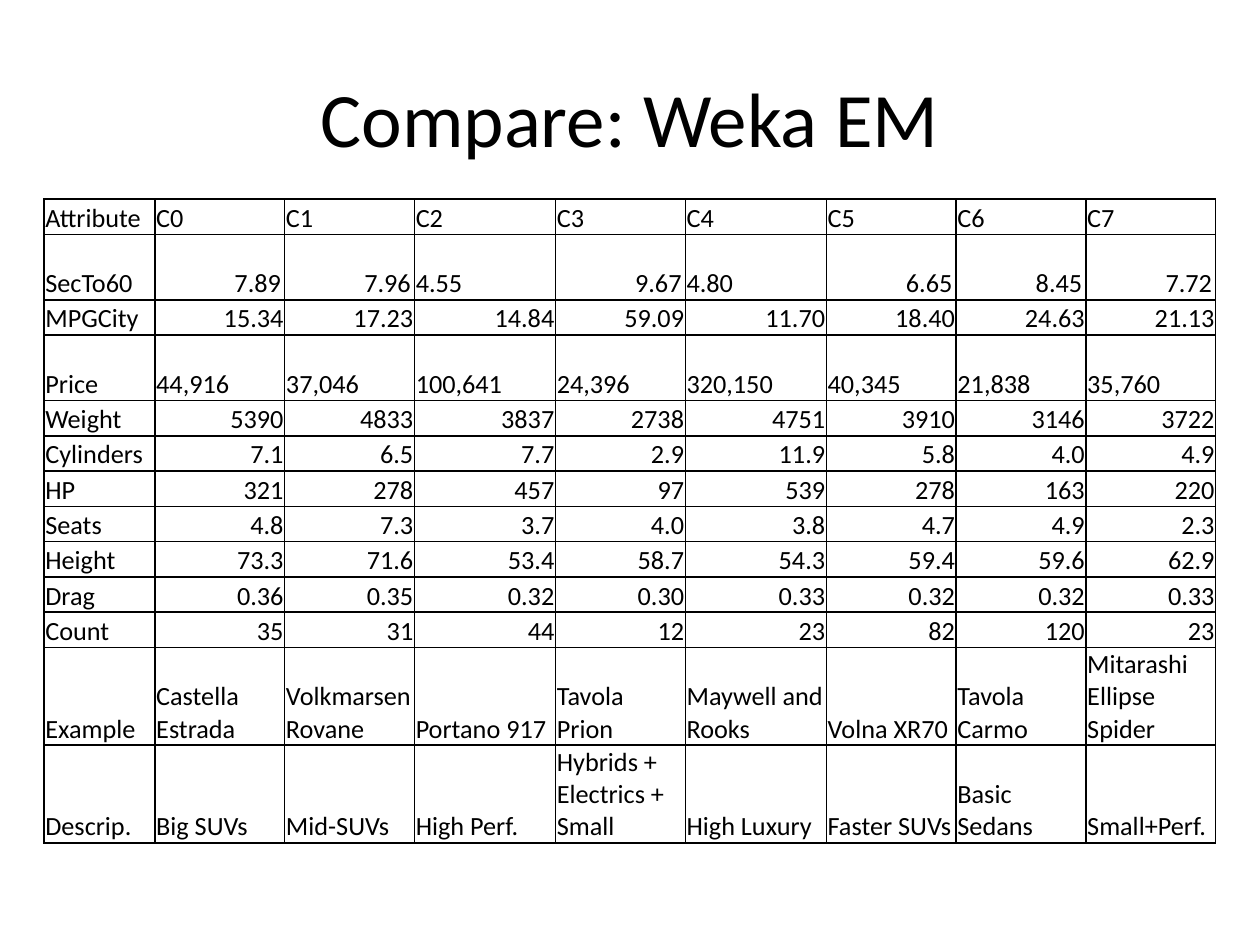
from lxml import etree
from pptx import Presentation
from pptx.dml.color import RGBColor
from pptx.enum.text import MSO_ANCHOR as Anchor, PP_ALIGN as Align
from pptx.oxml.ns import qn
from pptx.util import Inches, Pt

COLORS = {"text": "000000", "border": "000000", "background": "FFFFFF"}
FONT = "Calibri"
TITLE_ONLY = 5

COLUMN_WIDTHS = [0.88, 1.03, 1.03, 1.12, 1.03, 1.12, 1.03, 1.03, 1.03]
ROW_HEIGHT = 0.28
TALL_ROWS = {"SecTo60": 0.52, "Price": 0.52, "Example": 0.77, "Descrip.": 0.77}
LEFT_ROWS = {"Attribute", "Price", "Example", "Descrip."}
LEFT_CELLS = {("SecTo60", "C2"), ("SecTo60", "C4")}

CLUSTERS = [
    ["Attribute", "C0", "C1", "C2", "C3", "C4", "C5", "C6", "C7"],
    ["SecTo60", "7.89", "7.96", "4.55", "9.67", "4.80", "6.65", "8.45", "7.72"],
    ["MPGCity", "15.34", "17.23", "14.84", "59.09", "11.70", "18.40", "24.63", "21.13"],
    ["Price", "44,916", "37,046", "100,641", "24,396", "320,150", "40,345", "21,838", "35,760"],
    ["Weight", "5390", "4833", "3837", "2738", "4751", "3910", "3146", "3722"],
    ["Cylinders", "7.1", "6.5", "7.7", "2.9", "11.9", "5.8", "4.0", "4.9"],
    ["HP", "321", "278", "457", "97", "539", "278", "163", "220"],
    ["Seats", "4.8", "7.3", "3.7", "4.0", "3.8", "4.7", "4.9", "2.3"],
    ["Height", "73.3", "71.6", "53.4", "58.7", "54.3", "59.4", "59.6", "62.9"],
    ["Drag", "0.36", "0.35", "0.32", "0.30", "0.33", "0.32", "0.32", "0.33"],
    ["Count", "35", "31", "44", "12", "23", "82", "120", "23"],
    ["Example", "Castella Estrada", "Volkmarsen Rovane", "Portano 917", "Tavola Prion",
     "Maywell and Rooks", "Volna XR70", "Tavola Carmo", "Mitarashi Ellipse Spider"],
    ["Descrip.", "Big SUVs", "Mid-SUVs", "High Perf.", "Hybrids + Electrics + Small",
     "High Luxury", "Faster SUVs", "Basic Sedans", "Small+Perf."],
]


def write_text(text_frame, text, size=15, color="text", align=Align.LEFT):
    paragraph = text_frame.paragraphs[0]
    paragraph.alignment = align
    run = paragraph.add_run()
    run.text = text
    run.font.name = FONT
    run.font.size = Pt(size)
    run.font.color.rgb = RGBColor.from_string(COLORS[color])


def add_borders(cell, width=1):
    properties = cell._tc.get_or_add_tcPr()
    for side in ("a:lnL", "a:lnR", "a:lnT", "a:lnB"):
        line = etree.SubElement(properties, qn(side), w=str(Pt(width)))
        fill = etree.SubElement(line, qn("a:solidFill"))
        etree.SubElement(fill, qn("a:srgbClr"), val=COLORS["border"])


def format_cell(cell, right_margin):
    cell.vertical_anchor = Anchor.BOTTOM
    cell.margin_left = cell.margin_top = Inches(0.01)
    cell.margin_right = Inches(right_margin)
    cell.margin_bottom = 0
    add_borders(cell)
    cell.fill.background()


def place_title(slide, text, left, top, width, height):
    title = slide.shapes.title
    title.left, title.top = Inches(left), Inches(top)
    title.width, title.height = Inches(width), Inches(height)
    title.text_frame.vertical_anchor = Anchor.MIDDLE
    write_text(title.text_frame, text, size=44, align=Align.CENTER)


def place_cluster_table(slide, rows, left, top):
    heights = [TALL_ROWS.get(row[0], ROW_HEIGHT) for row in rows]
    frame = slide.shapes.add_table(
        len(rows), len(COLUMN_WIDTHS), Inches(left), Inches(top),
        Inches(sum(COLUMN_WIDTHS)), Inches(sum(heights)))
    table = frame.table
    table.first_row = table.horz_banding = False
    for column, width in zip(table.columns, COLUMN_WIDTHS):
        column.width = Inches(width)
    for row, height in zip(table.rows, heights):
        row.height = Inches(height)
    for row_index, row in enumerate(rows):
        attribute = row[0]
        for column_index, text in enumerate(row):
            is_left = (column_index == 0 or attribute in LEFT_ROWS
                       or (attribute, rows[0][column_index]) in LEFT_CELLS)
            cell = table.cell(row_index, column_index)
            format_cell(cell, 0.03 if attribute == "SecTo60" else 0.01)
            write_text(cell.text_frame, text, align=Align.LEFT if is_left else Align.RIGHT)


def main():
    presentation = Presentation()
    presentation.slide_width, presentation.slide_height = Inches(10), Inches(7.5)
    slide = presentation.slides.add_slide(presentation.slide_layouts[TITLE_ONLY])
    background = slide.background.fill
    background.solid()
    background.fore_color.rgb = RGBColor.from_string(COLORS["background"])
    place_title(slide, "Compare: Weka EM", 0.5, 0.3, 9, 1.25)
    place_cluster_table(slide, CLUSTERS, 0.35, 1.58)
    presentation.save("out.pptx")


if __name__ == "__main__":
    main()
